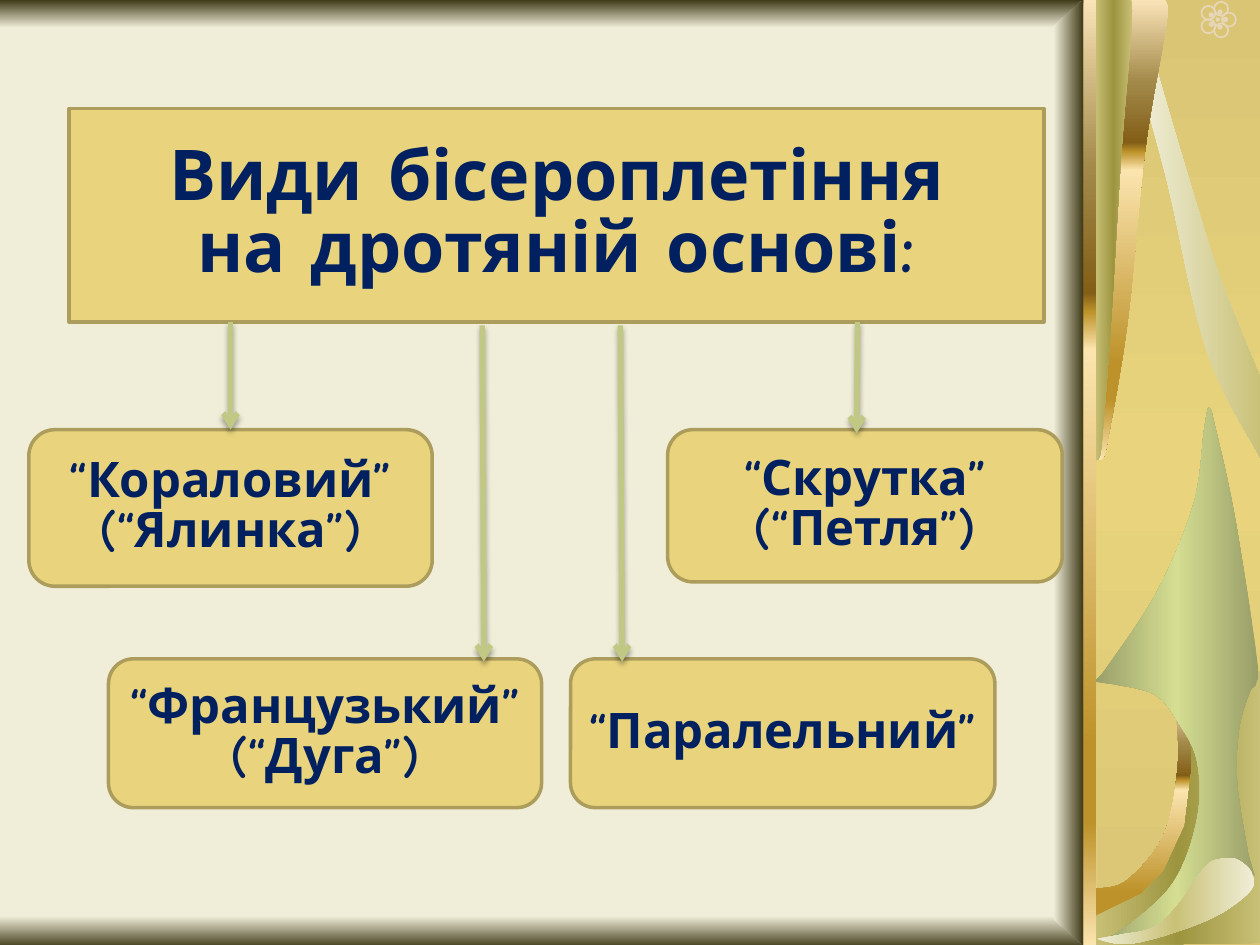
from math import cos, pi, sin

from lxml.etree import SubElement
from pptx import Presentation
from pptx.dml.color import RGBColor
from pptx.enum.shapes import MSO_CONNECTOR as Connector, MSO_SHAPE as Shape
from pptx.enum.text import MSO_ANCHOR as Anchor, MSO_AUTO_SIZE as AutoSize, PP_ALIGN as Align
from pptx.oxml import parse_xml
from pptx.oxml.ns import nsdecls, qn
from pptx.util import Pt

COLORS = {
    "cream": "F0EED8", "shade": "3F3B19", "sand": "D9C574", "box": "E9D47D",
    "edge": "AC9D5C", "ink": "002060", "arrow": "C0C883", "flower": "E7D6B7",
    "straw": "C9C177", "olive": "9D943F", "moss": "989E68", "lime": "D4DD91",
    "pale gold": "FAE3B7", "bronze": "A28949", "brown": "835E17",
    "gold": "BD922A", "light gold": "FBE4AE", "shadow": "000000",
}
FADE_OUT = [(0, "cream"), (100, "shade")]
FADE_IN = [(0, "shade"), (100, "cream")]
SAND = [(0, "sand"), (50, "box"), (100, "sand")]
GOLD = [(0, "pale gold"), (18, "bronze"), (31, "brown"), (33, "gold"),
        (37, "light gold"), (79, "gold"), (87, "gold"), (100, "light gold")]
OLIVE = [(0, "straw"), (50, "olive"), (100, "straw")]
LEAF = [(0, "moss"), (50, "lime"), (100, "moss")]
RIBBON = [(0, "cream"), (100, "straw")]
SCROLL = [(0, "cream"), (50, "straw"), (100, "cream")]

# left, top, width, height, gradient
PANELS = [
    (0, 523.5, 636.5, 18, FADE_OUT),
    (0, 0, 636.5, 16, FADE_IN),
    (626.5, 0, 95, 540, SAND),
]
RAIL = (619, 0, 7.5, 540, GOLD)

# Each outline is a list of smooth runs joined by straight lines: gradient, angle, runs
CURVES = [
    (GOLD, 90, [[(672, 406), (673, 438), (665, 477), (644, 503), (626, 508)],
                [(626, 539), (720, 539)], [(720, 409), (700, 400)]]),
    (OLIVE, 0, [[(625, 540), (625, 524)], [(652, 511), (665, 498)], [(677, 472), (681, 439)],
                [(680, 411), (711, 382)], [(721, 384), (721, 539)]]),
    (LEAF, 0, [[(692.5, 236), (690.5, 233), (688, 246), (682, 288), (661.5, 337.5),
                (633.5, 380), (625, 389.5)],
               [(636.5, 391), (660, 397), (673, 412.5), (684, 435), (684, 468), (670, 505),
                (640, 532), (627, 536.5)],
               [(648.5, 538.5), (672.5, 528.5), (687, 509), (699, 497), (711, 497), (717, 500.5)],
               [(713.5, 489), (707, 448), (708, 417), (714, 396), (718, 390), (718, 374.5),
                (705, 292), (692.5, 236)]]),
    (RIBBON, 0, [[(658, 29), (675.5, 89), (697, 158), (721, 217.5)],
                 [(721, 263), (690, 201.5), (668, 108), (651.5, 42), (658, 29)]]),
    (GOLD, 90, [[(625.5, 262), (630, 262), (633.5, 249), (644.5, 183), (654.5, 85),
                 (666.5, 14), (666, 0)], [(625.5, 0), (625.5, 262)]]),
    (OLIVE, 0, [[(625.5, 262), (628, 262), (630, 249), (635, 183), (641, 85),
                 (647, 14), (646.5, 0)], [(625.5, 0), (625.5, 262)]]),
]
SCROLL_CURVE = (SCROLL, 0, [[
    (626.5, 536.5), (641, 534), (659, 530), (673, 517.5), (683.5, 502), (692, 492.5),
    (703.5, 490.5), (710, 493), (715.5, 499), (715.5, 508), (701, 520), (683.5, 528.5),
    (659, 536.5), (641.5, 539.5), (626.5, 536.5)]])
BEVEL = (FADE_OUT, 0, [[(619, 0), (602, 15)], [(602, 525), (619, 540)]])

FLOWER_CENTER = (695.8, 11.2)
PETAL_COUNT = 5

TITLE = ((39.5, 62, 557, 122), 40, ["Види бісероплетіння", "на дротяній основі:"])
# box, lines, x and y of the arrow's start, x and y of its end
KINDS = [
    ((16.5, 245.5, 230.5, 89.5), ["“Кораловий”", "(“Ялинка”)"], (131.75, 184), (131.75, 245.5)),
    ((326, 376.5, 242.5, 85), ["“Паралельний”"], (354.5, 186), (355.5, 378)),
    ((62, 376.5, 247.5, 85), ["“Французький”", "(“Дуга”)"], (275.5, 186), (276.5, 378)),
    ((381.5, 245.5, 225.5, 87), ["“Скрутка”", "(“Петля”)"], (490, 184), (489.5, 247.5)),
]
KIND_SIZE = 28


def color(name):
    return RGBColor.from_string(COLORS[name])


def set_attributes(target, values):
    for name, value in values.items():
        setattr(target, name, value)


def fill_gradient(shape, stops, angle):
    """Fill with stops of (percent, color name); the angle runs clockwise."""
    shape.shadow.inherit = False
    shape.line.fill.background()
    shape.fill.gradient()
    gradient = shape._element.spPr.find(qn("a:gradFill"))
    stop_list = gradient.find(qn("a:gsLst"))
    for stop in list(stop_list):
        stop_list.remove(stop)
    for percent, name in stops:
        stop = SubElement(stop_list, qn("a:gs"), pos=str(percent * 1000))
        SubElement(stop, qn("a:srgbClr"), val=COLORS[name])
    gradient.find(qn("a:lin")).set("ang", str(angle * 60000))


def add_panel(slide, left, top, width, height, stops):
    panel = slide.shapes.add_shape(Shape.RECTANGLE, Pt(left), Pt(top), Pt(width), Pt(height))
    fill_gradient(panel, stops, 90)


def smooth(knots, steps=8):
    """Points of a Catmull-Rom curve through the knots."""
    if len(knots) < 3:
        return knots
    padded = [knots[0], *knots, knots[-1]]
    points = [knots[0]]
    for a, b, c, d in zip(padded, padded[1:], padded[2:], padded[3:]):
        for step in range(1, steps + 1):
            t = step / steps
            points.append(tuple(
                0.5 * (2 * q + (r - p) * t + (2 * p - 5 * q + 4 * r - s) * t ** 2
                       + (3 * q - p - 3 * r + s) * t ** 3)
                for p, q, r, s in zip(a, b, c, d)))
    return points


def add_curve(slide, stops, angle, runs):
    points = [(Pt(x), Pt(y)) for run in runs for x, y in smooth(run)]
    builder = slide.shapes.build_freeform(*points[0], scale=1.0)
    builder.add_line_segments(points[1:], close=True)
    fill_gradient(builder.convert_to_shape(), stops, angle)


def add_disc(slide, x, y, radius, outlined=False):
    disc = slide.shapes.add_shape(
        Shape.OVAL, Pt(x - radius), Pt(y - radius), Pt(2 * radius), Pt(2 * radius))
    disc.shadow.inherit = False
    if outlined:
        disc.fill.background()
        disc.line.color.rgb, disc.line.width = color("flower"), Pt(1)
    else:
        disc.fill.solid()
        disc.fill.fore_color.rgb = color("flower")
        disc.line.fill.background()


def add_flower(slide):
    x, y = FLOWER_CENTER
    add_disc(slide, x, y, 1.2)
    for petal in range(PETAL_COUNT):
        angle = 2 * pi * petal / PETAL_COUNT
        add_disc(slide, x + 6.5 * cos(angle), y + 6.5 * sin(angle), 4, outlined=True)
        add_disc(slide, x + 4.5 * cos(angle), y + 4.5 * sin(angle), 1.5)


def format_box(shape, lines, size):
    shape.fill.solid()
    shape.fill.fore_color.rgb = color("box")
    shape.line.color.rgb, shape.line.width = color("edge"), Pt(2)
    shape.shadow.inherit = False
    frame = shape.text_frame
    frame.text = "\n".join(lines)
    set_attributes(frame, {"word_wrap": False, "auto_size": AutoSize.NONE,
                           "vertical_anchor": Anchor.MIDDLE})
    for paragraph in frame.paragraphs:
        set_attributes(paragraph, {"alignment": Align.CENTER, "line_spacing": 0.85,
                                   "space_before": Pt(0)})
        set_attributes(paragraph.font, {"size": Pt(size), "bold": True, "name": "Comic Neue"})
        paragraph.font.color.rgb = color("ink")


def add_title(slide):
    """Give the title placeholder the rounded outline and bring it to the front."""
    box, size, lines = TITLE
    title = slide.shapes.title
    set_attributes(title, dict(zip(("left", "top", "width", "height"), map(Pt, box))))
    title._element.spPr.append(parse_xml(
        f'<a:prstGeom {nsdecls("a")} prst="flowChartAlternateProcess"><a:avLst/></a:prstGeom>'))
    format_box(title, lines, size)
    slide.shapes._spTree.append(title._element)


def add_arrow(slide, start, end, target):
    arrow = slide.shapes.add_connector(Connector.STRAIGHT, *map(Pt, start + end))
    if end == (target.left.pt + target.width.pt / 2, target.top.pt):
        arrow.end_connect(target, 0)
    arrow.line.color.rgb, arrow.line.width = color("arrow"), Pt(3)
    SubElement(arrow.line._get_or_add_ln(), qn("a:tailEnd"), type="arrow")
    arrow._element.spPr.append(parse_xml(
        f'<a:effectLst {nsdecls("a")}><a:outerShdw blurRad="{Pt(3.1)}" dist="{Pt(1.8)}" '
        f'dir="5400000" rotWithShape="0"><a:srgbClr val="{COLORS["shadow"]}">'
        '<a:alpha val="35000"/></a:srgbClr></a:outerShdw></a:effectLst>'))


def main():
    presentation = Presentation()
    set_attributes(presentation, {"slide_width": Pt(720), "slide_height": Pt(540)})
    slide = presentation.slides.add_slide(presentation.slide_layouts[5])
    slide.background.fill.solid()
    slide.background.fill.fore_color.rgb = color("cream")

    for panel in PANELS:
        add_panel(slide, *panel)
    add_flower(slide)
    for curve in CURVES:
        add_curve(slide, *curve)
    add_panel(slide, *RAIL)
    for curve in (SCROLL_CURVE, BEVEL):
        add_curve(slide, *curve)

    add_title(slide)
    boxes = []
    for box, lines, _, _ in KINDS:
        shape = slide.shapes.add_shape(Shape.FLOWCHART_ALTERNATE_PROCESS, *map(Pt, box))
        format_box(shape, lines, KIND_SIZE)
        boxes.append(shape)
    for shape, (_, _, start, end) in zip(boxes, KINDS):
        add_arrow(slide, start, end, shape)
    presentation.save("out.pptx")


if __name__ == "__main__":
    main()
